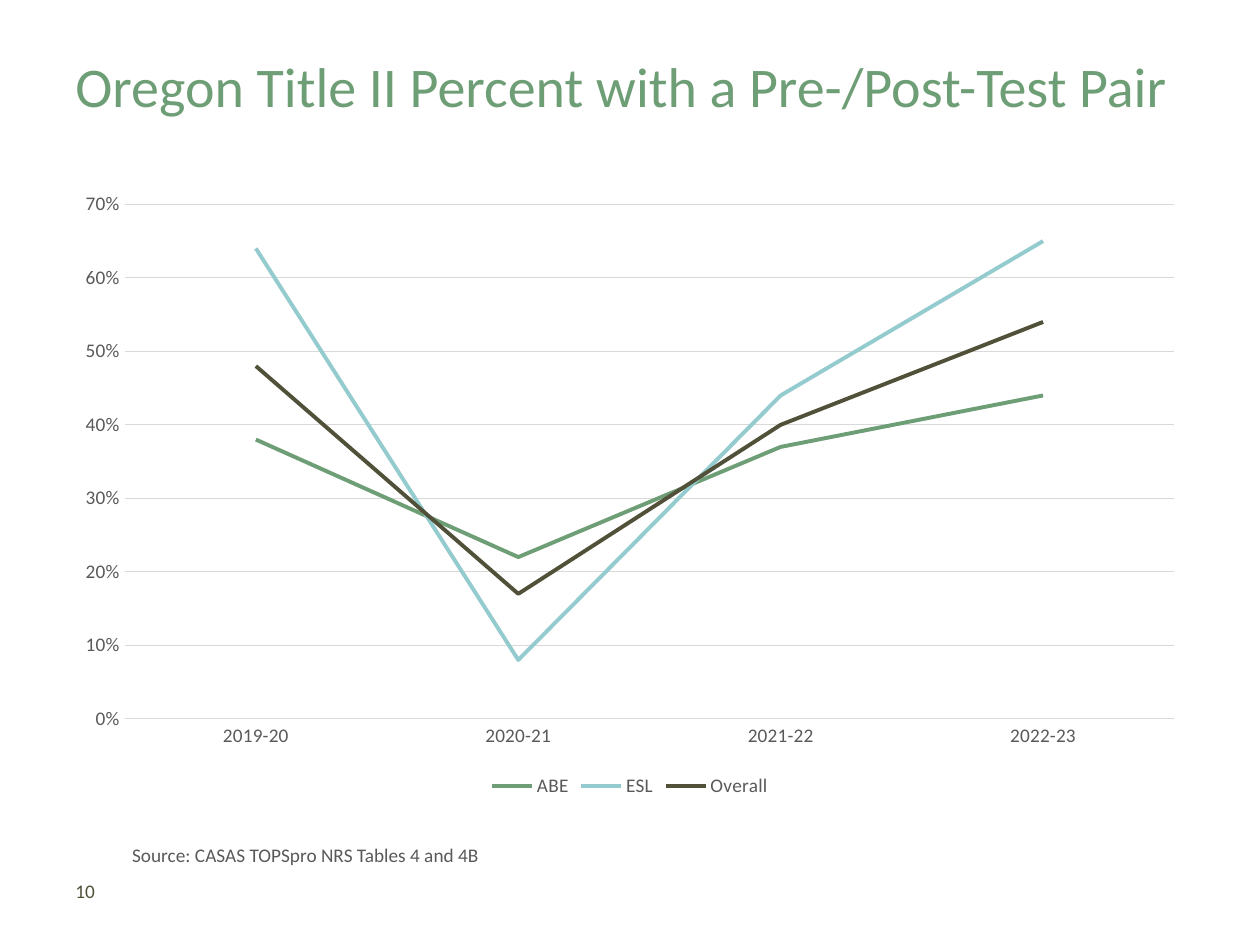
"""Build the slide on Oregon Title II pre- and post-test pairs."""
from dataclasses import dataclass

import pptx
import pptx.chart.data
import pptx.dml.color
import pptx.enum.chart
import pptx.enum.text
import pptx.util


@dataclass(frozen=True)
class Theme:
    font: str = "Calibri"
    green: str = "6E9E75"
    aqua: str = "94CBCF"
    olive: str = "515139"
    grey: str = "595959"
    rule: str = "D9D9D9"
    title_size: float = 32
    label_size: float = 11
    rule_width: float = 0.75
    series_width: float = 2.25


THEME = Theme()
WIDTH, HEIGHT = 10, 7.5
MARGIN = 0.05 * WIDTH
YEARS = ["2019-20", "2020-21", "2021-22", "2022-23"]
SERIES = [
    ("ABE", THEME.green, [0.38, 0.22, 0.37, 0.44]),
    ("ESL", THEME.aqua, [0.64, 0.08, 0.44, 0.65]),
    ("Overall", THEME.olive, [0.48, 0.17, 0.40, 0.54]),
]


def inches(*lengths):
    return [pptx.util.Inches(length) for length in lengths]


def style_font(font, size, color):
    font.name = THEME.font
    font.size = pptx.util.Pt(size)
    font.color.rgb = pptx.dml.color.RGBColor.from_string(color)


def style_line(line, width, color):
    line.width = pptx.util.Pt(width)
    line.color.rgb = pptx.dml.color.RGBColor.from_string(color)


def add_text(slide, text, box, size, color, middle=False, wrap=True):
    frame = slide.shapes.add_textbox(*inches(*box)).text_frame
    frame.word_wrap = wrap
    anchors = pptx.enum.text.MSO_ANCHOR
    frame.vertical_anchor = anchors.MIDDLE if middle else anchors.TOP
    run = frame.paragraphs[0].add_run()
    run.text = text
    style_font(run.font, size, color)


def style_axis(axis):
    axis.major_tick_mark = pptx.enum.chart.XL_TICK_MARK.NONE
    axis.minor_tick_mark = pptx.enum.chart.XL_TICK_MARK.NONE
    style_font(axis.tick_labels.font, THEME.label_size, THEME.grey)


def style_axes(chart):
    style_axis(chart.category_axis)
    style_line(chart.category_axis.format.line, THEME.rule_width, THEME.rule)
    values = chart.value_axis
    style_axis(values)
    values.minimum_scale, values.maximum_scale, values.major_unit = 0, 0.7, 0.1
    values.tick_labels.number_format = "0%"
    values.tick_labels.number_format_is_linked = False
    values.format.line.fill.background()
    values.has_major_gridlines = True
    style_line(values.major_gridlines.format.line, THEME.rule_width, THEME.rule)


def add_line_chart(slide, box):
    data = pptx.chart.data.CategoryChartData(number_format="0%")
    data.categories = YEARS
    for name, _, values in SERIES:
        data.add_series(name, values)
    kind = pptx.enum.chart.XL_CHART_TYPE.LINE
    chart = slide.shapes.add_chart(kind, *inches(*box), data).chart
    chart.has_title = False
    chart.font.name = THEME.font
    chart.font.size = pptx.util.Pt(10)
    chart.has_legend = True
    chart.legend.position = pptx.enum.chart.XL_LEGEND_POSITION.BOTTOM
    chart.legend.include_in_layout = False
    style_font(chart.legend.font, THEME.label_size, THEME.grey)
    style_axes(chart)
    plot = chart.plots[0]
    plot.vary_by_categories = False
    for series, (_, color, _) in zip(plot.series, SERIES):
        series.smooth = False
        series.marker.style = pptx.enum.chart.XL_MARKER_STYLE.NONE
        style_line(series.format.line, THEME.series_width, color)


def main():
    presentation = pptx.Presentation()
    presentation.slide_width, presentation.slide_height = inches(WIDTH, HEIGHT)
    slide = presentation.slides.add_slide(presentation.slide_layouts[6])
    content_width = WIDTH - 2 * MARGIN
    add_line_chart(slide, (MARGIN, 1.43, content_width, 4.94))
    add_text(slide, "Oregon Title II Percent with a Pre-/Post-Test Pair",
             (MARGIN, 0.36, content_width, 0.93), THEME.title_size, THEME.green)
    add_text(slide, "10", (MARGIN, 6.92, 2.33, 0.3),
             THEME.label_size, THEME.olive, middle=True)
    add_text(slide, "Source: CASAS TOPSpro NRS Tables 4 and 4B",
             (0.95, 6.64, 2.99, 0.29), THEME.label_size, THEME.grey, wrap=False)
    presentation.save("out.pptx")


if __name__ == "__main__":
    main()
